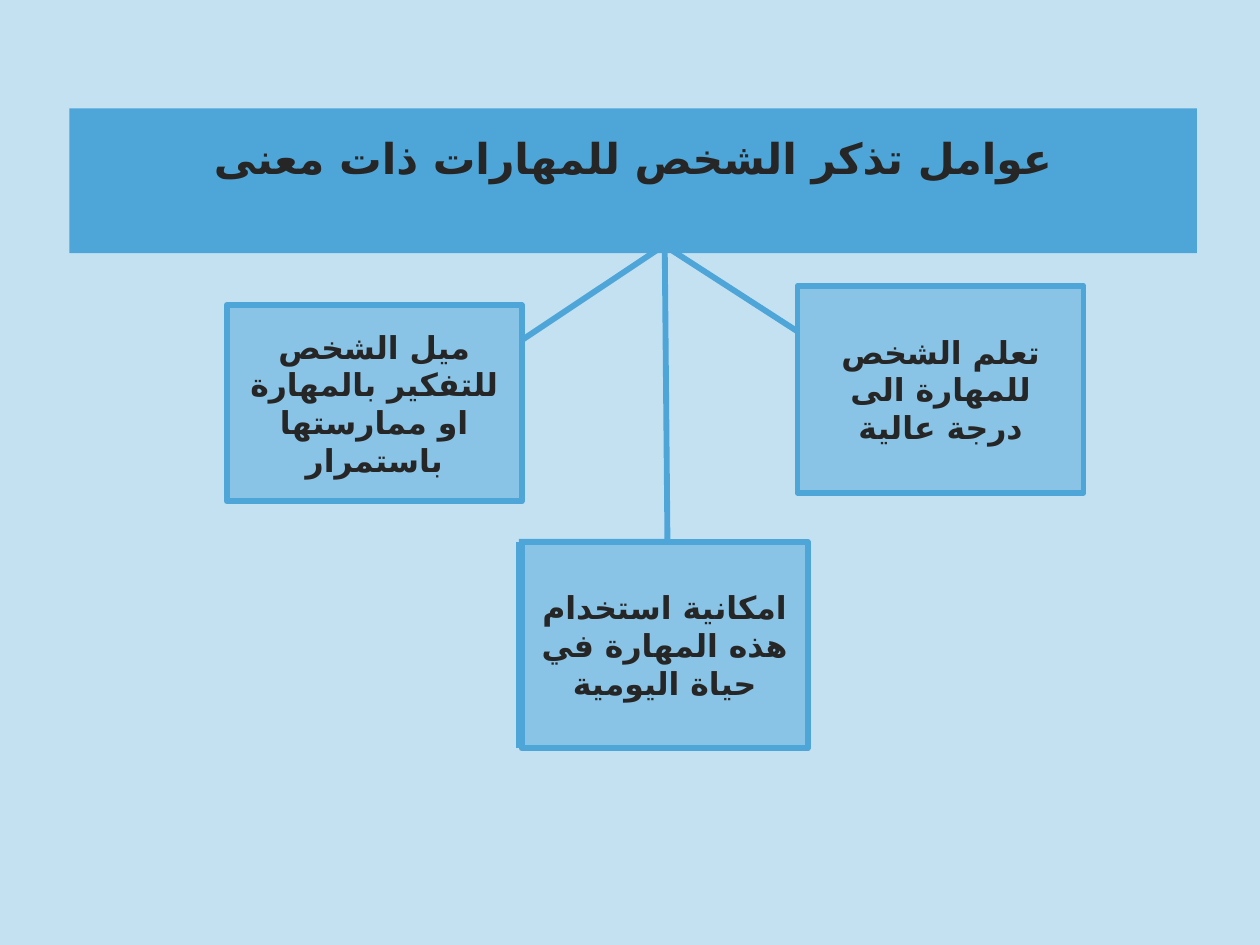
from pptx import Presentation
from pptx.dml.color import RGBColor
from pptx.enum.shapes import MSO_SHAPE as Shape
from pptx.enum.text import MSO_ANCHOR as Anchor, MSO_AUTO_SIZE as AutoSize, PP_ALIGN as Align
from pptx.oxml.ns import qn
from pptx.util import Inches, Pt

BACKGROUND = RGBColor(0xC4, 0xE1, 0xF2)
BAND = RGBColor(0x4E, 0xA5, 0xD8)
PANEL = RGBColor(0x89, 0xC3, 0xE5)
INK = RGBColor(0x26, 0x26, 0x26)
FONT = "DejaVu Sans"

HEADING = "عوامل تذكر الشخص للمهارات ذات معنى"
HEADING_BOX = (0.55, 0.86, 8.95, 1.15)
STRAIGHT = Shape.LINE_CALLOUT_1_BORDER_AND_ACCENT_BAR
BENT = Shape.LINE_CALLOUT_2_BORDER_AND_ACCENT_BAR

# Text, callout kind, box in inches, leader points as (y, x) shares of the box
FACTORS = [
    ("تعلم الشخص للمهارة الى درجة عالية", STRAIGHT,
     (6.33, 2.27, 2.27, 1.64), [(0.22, 0), (-0.2, -0.47)]),
    ("ميل الشخص للتفكير بالمهارة او ممارستها باستمرار", STRAIGHT,
     (1.8, 2.42, 2.34, 1.56), [(0.18, 1), (-0.3, 1.48)]),
    ("امكانية استخدام هذه المهارة في حياة اليومية", BENT,
     (4.14, 4.3, 2.27, 1.64), [(0, -0.01), (0, 0.51), (-1.48, 0.5)]),
]


def write(shape, text, size, anchor=Anchor.MIDDLE, top=0.05):
    frame = shape.text_frame
    frame.word_wrap = True
    frame.auto_size = AutoSize.NONE
    frame.vertical_anchor = anchor
    frame.margin_top = Inches(top)
    paragraph = frame.paragraphs[0]
    paragraph.alignment = Align.CENTER
    paragraph._p.get_or_add_pPr().set("rtl", "1")
    run = paragraph.add_run()
    run.text = text
    font = run.font
    font.name, font.size, font.bold = FONT, Pt(size), True
    font.color.rgb = INK
    # Arabic letters take the complex-script font
    properties = run._r.get_or_add_rPr()
    complex_font = properties.makeelement(qn("a:cs"), {"typeface": FONT})
    properties.append(complex_font)


def paint(shape, color):
    shape.fill.solid()
    shape.fill.fore_color.rgb = color


prs = Presentation()
prs.slide_width, prs.slide_height = Inches(10), Inches(7.5)
slide = prs.slides.add_slide(prs.slide_layouts[5])
slide.background.fill.solid()
slide.background.fill.fore_color.rgb = BACKGROUND

# Heading band
heading = slide.shapes.title
heading.left, heading.top, heading.width, heading.height = map(Inches, HEADING_BOX)
paint(heading, BAND)
write(heading, HEADING, 24.3, anchor=Anchor.TOP, top=0.19)

# Factors, each with a leader to the heading
for text, kind, box, leader in FACTORS:
    factor = slide.shapes.add_shape(kind, *map(Inches, box))
    factor.shadow.inherit = False
    paint(factor, PANEL)
    factor.line.color.rgb = BAND
    factor.line.width = Pt(3.35)
    shares = [share for point in leader for share in point]
    for index, share in enumerate(shares):
        factor.adjustments[index] = share
    write(factor, text, 18)

prs.save("out.pptx")
